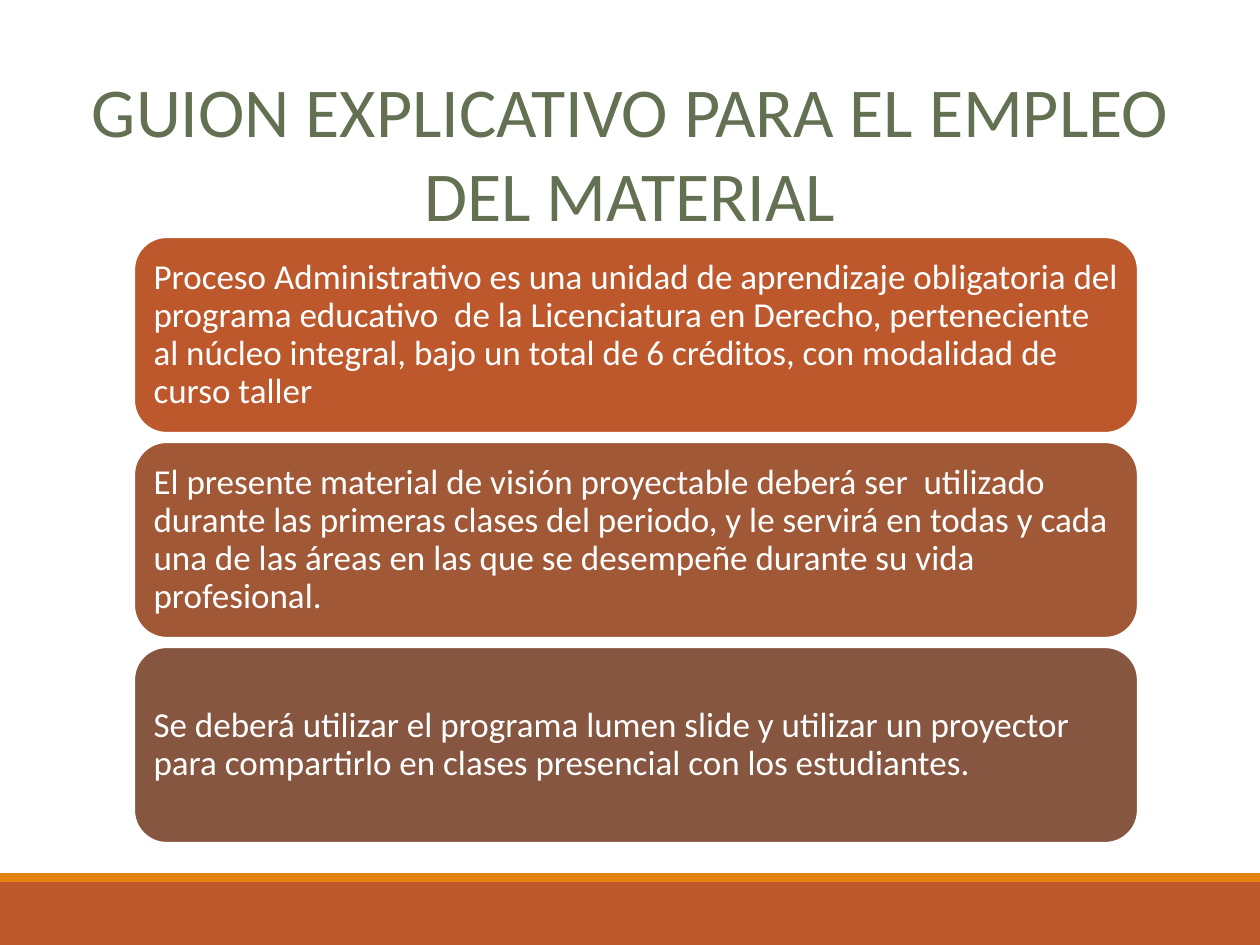
"""Build the slide explaining how the course material is to be used."""
from dataclasses import dataclass

from pptx import Presentation
from pptx.dml.color import RGBColor
from pptx.enum.shapes import MSO_SHAPE
from pptx.enum.text import MSO_ANCHOR, MSO_AUTO_SIZE, PP_ALIGN
from pptx.util import Emu, Pt

RECTANGLE = MSO_SHAPE.RECTANGLE
ROUNDED = MSO_SHAPE.ROUNDED_RECTANGLE
MIDDLE = MSO_ANCHOR.MIDDLE
NO_AUTOFIT = MSO_AUTO_SIZE.NONE
LEFT, CENTER = PP_ALIGN.LEFT, PP_ALIGN.CENTER


@dataclass(frozen=True)
class Theme:
    font: str = "Calibri"
    title_size: int = 40
    body_size: int = 20
    outline: float = 1.25
    title: str = "637052"
    white: str = "FFFFFF"
    footer: str = "BD582C"
    stripe: str = "E48312"
    cards: tuple = ("BD582C", "A05837", "865640")


THEME = Theme()
SCALE = 914400 / 126
CARD_LEFT, CARD_TOP, CARD_WIDTH, CARD_HEIGHT, CARD_GAP = 134, 237, 1004, 196, 9
CARD_MARGIN = 10
TITLE = "GUION EXPLICATIVO PARA EL EMPLEO DEL MATERIAL"
CARD_TEXTS = (
    "Proceso Administrativo es una unidad de aprendizaje obligatoria del "
    "programa educativo  de la Licenciatura en Derecho, perteneciente al núcleo "
    "integral, bajo un total de 6 créditos, con modalidad de curso taller",
    "El presente material de visión proyectable deberá ser  utilizado durante "
    "las primeras clases del periodo, y le servirá en todas y cada una de las "
    "áreas en las que se desempeñe durante su vida profesional.",
    "Se deberá utilizar el programa lumen slide y utilizar un proyector para "
    "compartirlo en clases presencial con los estudiantes.",
)


def px(length):
    return Emu(round(length * SCALE))


def add_box(kind, left, top, width, height, color):
    box = slide.shapes.add_shape(kind, px(left), px(top), px(width), px(height))
    box.shadow.inherit = False
    box.fill.solid()
    box.fill.fore_color.rgb = RGBColor.from_string(color)
    box.line.fill.background()
    return box


deck = Presentation()
deck.slide_width, deck.slide_height = px(1260), px(945)
slide = deck.slides.add_slide(deck.slide_layouts[5])

add_box(RECTANGLE, 0, 882, 1260, 63, THEME.footer)
add_box(RECTANGLE, 0, 873, 1260, 9, THEME.stripe)

title = slide.shapes.title
title.left, title.top, title.width, title.height = px(63), px(97), px(1134), px(110)
title.text_frame.text = TITLE
title.text_frame.auto_size = NO_AUTOFIT
title.text_frame.vertical_anchor = MIDDLE
para = title.text_frame.paragraphs[0]
para.alignment = CENTER
para.font.name = THEME.font
para.font.size = Pt(THEME.title_size)
para.font.color.rgb = RGBColor.from_string(THEME.title)

for index, (text, color) in enumerate(zip(CARD_TEXTS, THEME.cards)):
    top = CARD_TOP + index * (CARD_HEIGHT + CARD_GAP)
    card = add_box(ROUNDED, CARD_LEFT, top, CARD_WIDTH, CARD_HEIGHT, color)
    card.line.color.rgb = RGBColor.from_string(THEME.white)
    card.line.width = Pt(THEME.outline)
    frame = card.text_frame
    frame.word_wrap = True
    frame.vertical_anchor = MIDDLE
    frame.margin_left = frame.margin_right = px(CARD_MARGIN)
    frame.margin_top = frame.margin_bottom = px(CARD_MARGIN)
    frame.text = text
    para = frame.paragraphs[0]
    para.alignment = LEFT
    para.line_spacing = 0.9
    para.font.name = THEME.font
    para.font.size = Pt(THEME.body_size)
    para.font.color.rgb = RGBColor.from_string(THEME.white)

deck.save("out.pptx")
